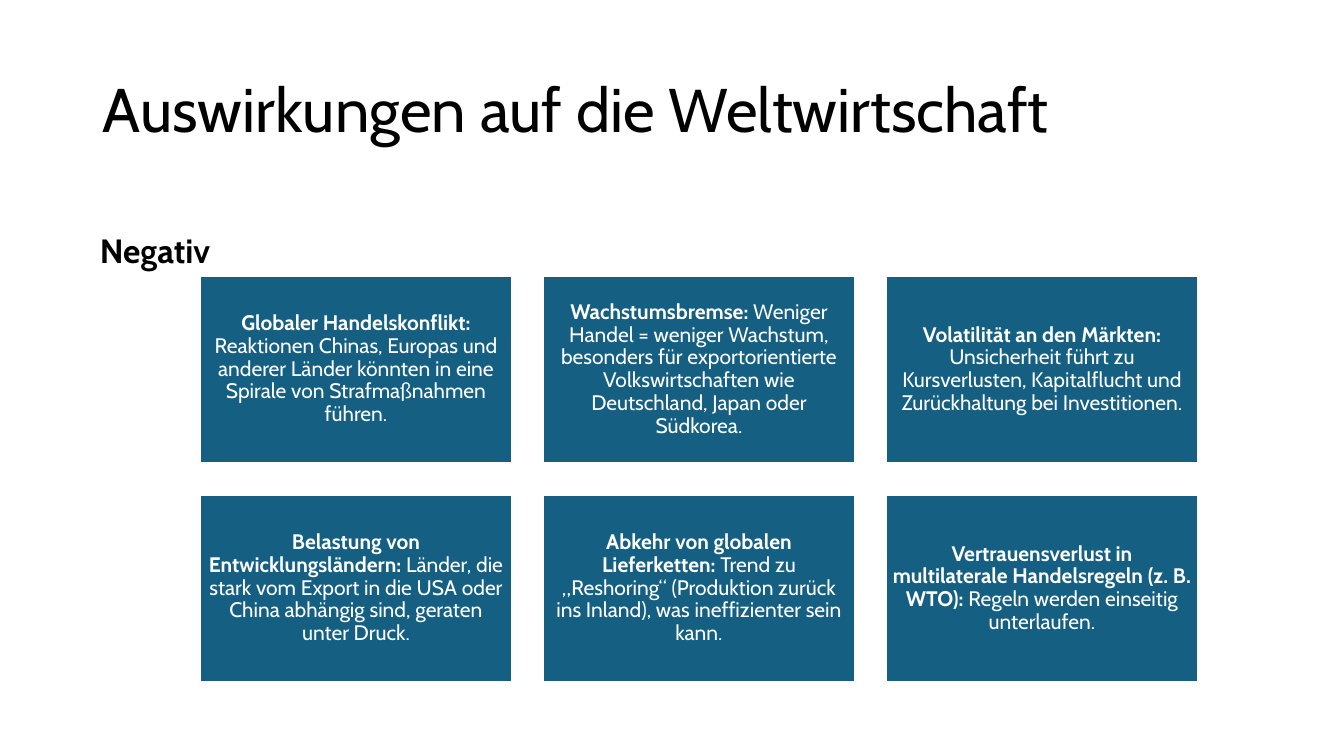
from dataclasses import dataclass

from pptx import Presentation
from pptx.dml.color import RGBColor
from pptx.enum.shapes import MSO_SHAPE
from pptx.enum.text import MSO_ANCHOR, PP_ALIGN
from pptx.util import Emu, Inches, Pt

RECTANGLE = MSO_SHAPE.RECTANGLE
MIDDLE, BOTTOM = MSO_ANCHOR.MIDDLE, MSO_ANCHOR.BOTTOM
LEFT, CENTER = PP_ALIGN.LEFT, PP_ALIGN.CENTER

PX_PER_INCH = 100.8
FONT = "Cabin"
BLACK = RGBColor(0x00, 0x00, 0x00)
WHITE = RGBColor(0xFF, 0xFF, 0xFF)
BLUE = RGBColor(0x15, 0x60, 0x82)

# Card grid in px
COLUMNS = 3
GRID_LEFT, GRID_TOP = 200, 276
CARD_W, CARD_H = 312, 187
STEP_X, STEP_Y = 343, 219
CARD_INSET = 6


@dataclass(frozen=True)
class Heading:
    text: str
    box: tuple[int, int, int, int]
    size: int
    bold: bool
    anchor: MSO_ANCHOR


@dataclass(frozen=True)
class Card:
    label: str
    detail: str


HEADINGS = [
    Heading("Auswirkungen auf die Weltwirtschaft", (93, 40, 1159, 146), 44, False, MIDDLE),
    Heading("Negativ", (90, 185, 572, 91), 24, True, BOTTOM),
]

# Each detail starts with a no-break space
CARDS = [
    Card("Globaler Handelskonflikt:",
         " Reaktionen Chinas, Europas und anderer Länder könnten in eine "
         "Spirale von Strafmaßnahmen führen."),
    Card("Wachstumsbremse:",
         " Weniger Handel = weniger Wachstum, besonders für exportorientierte "
         "Volkswirtschaften wie Deutschland, Japan oder Südkorea."),
    Card("Volatilität an den Märkten:",
         " Unsicherheit führt zu Kursverlusten, Kapitalflucht und "
         "Zurückhaltung bei Investitionen."),
    Card("Belastung von Entwicklungsländern:",
         " Länder, die stark vom Export in die USA oder China abhängig sind, "
         "geraten unter Druck."),
    Card("Abkehr von globalen Lieferketten:",
         " Trend zu „Reshoring“ (Produktion zurück ins Inland), was "
         "ineffizienter sein kann."),
    Card("Vertrauensverlust in multilaterale Handelsregeln (z. B. WTO):",
         " Regeln werden einseitig unterlaufen."),
]


def px(n: int) -> Emu:
    return Emu(round(n * Inches(1) / PX_PER_INCH))


def format_paragraph(p, size: int, color: RGBColor, align: PP_ALIGN) -> None:
    p.alignment = align
    p.line_spacing = 0.9
    p.font.name = FONT
    p.font.size = Pt(size)
    p.font.color.rgb = color


def add_heading(s, heading: Heading) -> None:
    tf = s.shapes.add_textbox(*map(px, heading.box)).text_frame
    tf.word_wrap = True
    tf.vertical_anchor = heading.anchor
    p = tf.paragraphs[0]
    p.text = heading.text
    format_paragraph(p, heading.size, BLACK, LEFT)
    p.font.bold = heading.bold


def add_card(s, card: Card, left: int, top: int) -> None:
    sp = s.shapes.add_shape(RECTANGLE, px(left), px(top), px(CARD_W), px(CARD_H))
    sp.shadow.inherit = False
    sp.fill.solid()
    sp.fill.fore_color.rgb = BLUE
    sp.line.color.rgb = WHITE
    sp.line.width = Pt(1.5)

    tf = sp.text_frame
    tf.word_wrap = True
    tf.vertical_anchor = MIDDLE
    tf.margin_left = tf.margin_right = px(CARD_INSET)
    tf.margin_top = tf.margin_bottom = px(CARD_INSET)
    p = tf.paragraphs[0]
    format_paragraph(p, 15, WHITE, CENTER)
    for text, bold in ((card.label, True), (card.detail, False)):
        r = p.add_run()
        r.text = text
        r.font.bold = bold


def main() -> None:
    prs = Presentation()
    prs.slide_width, prs.slide_height = px(1344), px(756)
    s = prs.slides.add_slide(prs.slide_layouts[6])

    # Title and section heading
    for heading in HEADINGS:
        add_heading(s, heading)

    # Cards, row by row
    for i, card in enumerate(CARDS):
        row, column = divmod(i, COLUMNS)
        add_card(s, card, GRID_LEFT + column * STEP_X, GRID_TOP + row * STEP_Y)

    prs.save("out.pptx")


if __name__ == "__main__":
    main()
